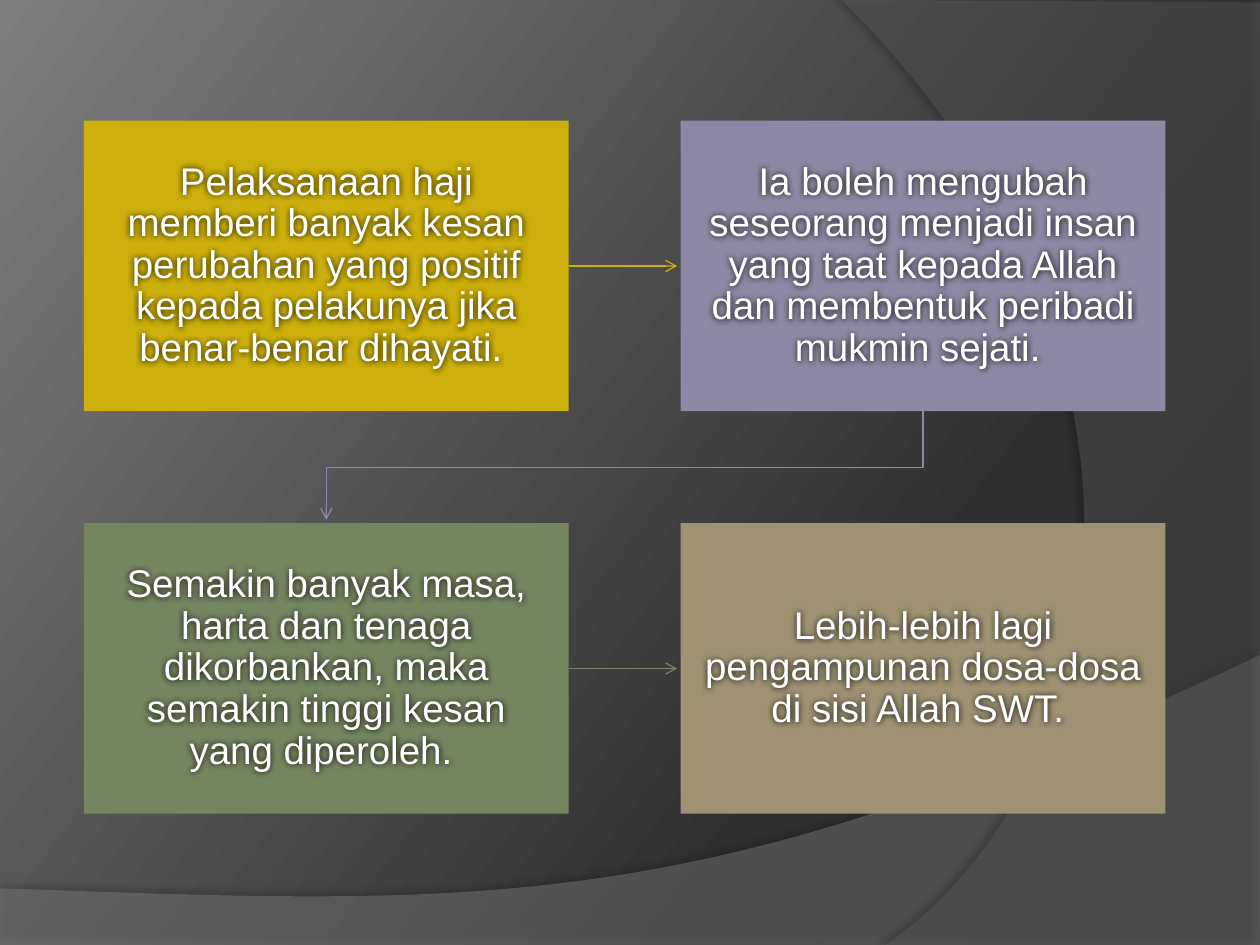
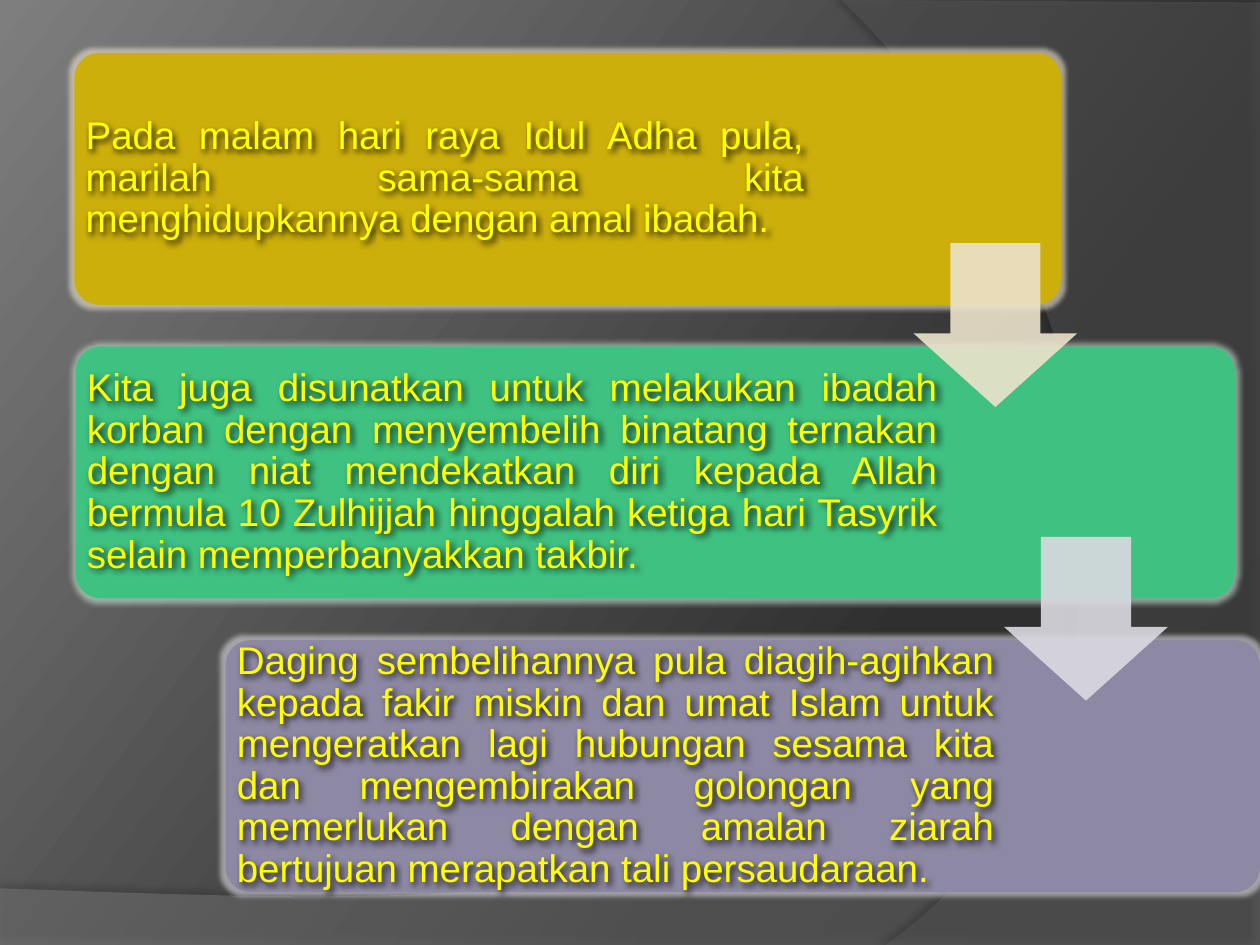
import pptx
import pptx.util
from lxml import etree
from pptx.dml.color import RGBColor
from pptx.enum.shapes import MSO_CONNECTOR, MSO_SHAPE
from pptx.enum.text import MSO_ANCHOR, PP_ALIGN
from pptx.oxml.ns import qn

Pt = pptx.util.Pt

GOLD = RGBColor(0xCC, 0xAF, 0x0A)
LAVENDER = RGBColor(0x8D, 0x89, 0xA4)
OLIVE = RGBColor(0x74, 0x85, 0x60)
SAND = RGBColor(0x9E, 0x92, 0x73)
EMERALD = RGBColor(0x3F, 0xC2, 0x81)
PALE_GOLD = RGBColor(0xEC, 0xE3, 0xCC)
PALE_GREEN = RGBColor(0xCC, 0xE8, 0xD8)
PALE_LAVENDER = RGBColor(0xDB, 0xDA, 0xE1)
WHITE = RGBColor(0xFF, 0xFF, 0xFF)
YELLOW = RGBColor(0xFF, 0xFF, 0x00)
BLACK = RGBColor(0, 0, 0)
LOWER_WAVE = RGBColor(0x7F, 0x7F, 0x7F)
RIGHT_WAVE = RGBColor(0x5E, 0x5E, 0x5E)
BACKDROP_STOPS = [
    (0, RGBColor(0x28, 0x28, 0x28)),
    (30, RGBColor(0x2F, 0x2F, 0x2F)),
    (100, RGBColor(0x7E, 0x7E, 0x7E)),
]

SLIDE_W, SLIDE_H = 720, 540
FONT, TEXT_SIZE = "Arial", 22

# Slide 1: grid of four steps
STEP_W, STEP_H = 277, 166
STEP_LEFTS, STEP_TOPS = (48, 389), (69, 299)
ARROW_GAP = 2
STEPS = [
    (GOLD, "Pelaksanaan haji memberi banyak kesan perubahan yang positif "
           "kepada pelakunya jika benar-benar dihayati. "),
    (LAVENDER, "Ia boleh mengubah seseorang menjadi insan yang taat kepada "
               "Allah dan membentuk peribadi mukmin sejati. "),
    (OLIVE, "Semakin banyak masa, harta dan tenaga dikorbankan, maka semakin "
            "tinggi kesan yang diperoleh. "),
    (SAND, "Lebih-lebih lagi pengampunan dosa-dosa di sisi Allah SWT. "),
]

# Slide 2: staircase of three bands (left, width, text width, fill, glow, text)
BAND_TOP, BAND_H, BAND_PITCH = 30.2, 144, 167.8
BANDS = [
    (42.5, 563.8, 423.4, GOLD, PALE_GOLD,
     "Pada malam hari raya Idul Adha pula, marilah sama-sama kita "
     "menghidupkannya dengan amal ibadah. "),
    (43.2, 662.4, 499, EMERALD, PALE_GREEN,
     "Kita juga disunatkan untuk melakukan ibadah korban dengan menyembelih "
     "binatang ternakan dengan niat mendekatkan diri kepada Allah bermula "
     "10 Zulhijjah hinggalah ketiga hari Tasyrik selain memperbanyakkan "
     "takbir. "),
    (128.9, 591.1, 445.7, LAVENDER, PALE_LAVENDER,
     "Daging sembelihannya pula diagih-agihkan kepada fakir miskin dan umat "
     "Islam untuk mengeratkan lagi hubungan sesama kita dan mengembirakan "
     "golongan yang memerlukan dengan amalan ziarah bertujuan merapatkan "
     "tali persaudaraan."),
]
ARROW_TOP, ARROW_SIZE = 139, 93.6
DOWN_ARROWS = [(522, PALE_GOLD), (573.8, PALE_LAVENDER)]


def add_colour(parent, colour, alpha=100):
    node = etree.SubElement(parent, qn("a:srgbClr"), val=str(colour))
    if alpha < 100:
        etree.SubElement(node, qn("a:alpha"), val=str(alpha * 1000))


def add_effect(shape, tag, colour, alpha, **lengths):
    shape.shadow.inherit = False
    effects = shape._element.spPr.find(qn("a:effectLst"))
    attributes = {key: str(int(value)) for key, value in lengths.items()}
    add_colour(etree.SubElement(effects, qn(tag), attributes), colour, alpha)


def add_shadow(shape, alpha, blur, distance, angle):
    add_effect(shape, "a:outerShdw", BLACK, alpha, blurRad=Pt(blur),
               dist=Pt(distance), dir=angle * 60000)


def paint(shape, colour, alpha=100):
    """Give a shape a plain fill without outline or shadow."""
    shape.shadow.inherit = False
    shape.fill.solid()
    shape.fill.fore_color.rgb = colour
    shape.line.fill.background()
    if alpha < 100:
        node = shape._element.spPr.find(qn("a:solidFill"))[0]
        etree.SubElement(node, qn("a:alpha"), val=str(alpha * 1000))


def add_block(slide, kind, left, top, width, height, colour, alpha=100):
    block = slide.shapes.add_shape(
        kind, Pt(left), Pt(top), Pt(width), Pt(height))
    paint(block, colour, alpha)
    return block


def add_outline(slide, points, close):
    points = [(Pt(x), Pt(y)) for x, y in points]
    builder = slide.shapes.build_freeform(*points[0])
    builder.add_line_segments(points[1:], close=close)
    return builder.convert_to_shape()


def bezier(start, control_1, control_2, end, steps=40):
    """Return points along a cubic curve, both ends included."""
    points = []
    for step in range(steps + 1):
        t = step / steps
        weights = ((1 - t) ** 3, 3 * t * (1 - t) ** 2,
                   3 * t ** 2 * (1 - t), t ** 3)
        corners = (start, control_1, control_2, end)
        points.append(tuple(sum(w * corner[axis] for w, corner
                                in zip(weights, corners)) for axis in (0, 1)))
    return points


def add_backdrop(slide):
    fill = slide.background.fill
    fill.gradient()
    fill.gradient_angle = 143
    stops = slide.element.find(".//" + qn("a:gsLst"))
    for stop in list(stops):
        stops.remove(stop)
    for position, colour in BACKDROP_STOPS:
        add_colour(etree.SubElement(stops, qn("a:gs"),
                                    pos=str(position * 1000)), colour)

    lower_edge = bezier((SLIDE_W, 374.4), (402.5, 524.9), (281.5, 517.7),
                        (0, 507.6))
    lower = add_outline(
        slide, [(0, SLIDE_H), (SLIDE_W, SLIDE_H)] + lower_edge, True)
    paint(lower, LOWER_WAVE, 45)
    add_shadow(lower, 35, 4, 3.5, 270)

    right_edge = bezier((506.2, SLIDE_H), (641.5, 445.7), (681.8, 198),
                        (481, 0))
    right = add_outline(
        slide, [(SLIDE_W, 1.4), (SLIDE_W, SLIDE_H)] + right_edge, True)
    paint(right, RIGHT_WAVE, 40)
    add_shadow(right, 45, 4, 4, 180)


def add_text(slide, text, left, top, width, height, colour, align, inset,
             shadow_distance):
    box = slide.shapes.add_textbox(Pt(left), Pt(top), Pt(width), Pt(height))
    add_shadow(box, 85, 4, shadow_distance, 45)
    frame = box.text_frame
    frame.word_wrap = True
    frame.vertical_anchor = MSO_ANCHOR.MIDDLE
    frame.margin_left = frame.margin_right = Pt(inset)
    frame.margin_top = frame.margin_bottom = Pt(inset)
    paragraph = frame.paragraphs[0]
    paragraph.text = text
    paragraph.alignment = align
    paragraph.line_spacing = 0.9
    paragraph.font.name = FONT
    paragraph.font.size = Pt(TEXT_SIZE)
    paragraph.font.color.rgb = colour


def style_arrow(arrow, colour):
    arrow.line.color.rgb = colour
    arrow.line.width = Pt(0.75)
    etree.SubElement(arrow.line._get_or_add_ln(), qn("a:tailEnd"),
                     type="arrow")


def add_side_arrow(slide, step, colour, row):
    y = Pt(STEP_TOPS[row] + STEP_H / 2)
    arrow = slide.shapes.add_connector(
        MSO_CONNECTOR.STRAIGHT, Pt(STEP_LEFTS[0] + STEP_W), y,
        Pt(STEP_LEFTS[1] - ARROW_GAP), y)
    arrow.begin_connect(step, 3)
    style_arrow(arrow, colour)
    etree.SubElement(arrow._element.spPr, qn("a:effectLst"))


def add_return_arrow(slide, colour):
    """Lead from the end of the first row to the start of the second."""
    start_x, end_x = (left + STEP_W / 2 for left in reversed(STEP_LEFTS))
    start_y = STEP_TOPS[0] + STEP_H
    bend_y = (start_y + STEP_TOPS[1]) / 2
    arrow = add_outline(
        slide, [(start_x, start_y), (start_x, bend_y), (end_x, bend_y),
                (end_x, STEP_TOPS[1] - ARROW_GAP)], False)
    arrow.shadow.inherit = False
    arrow.fill.background()
    style_arrow(arrow, colour)


def build_steps(slide):
    for index, (colour, text) in enumerate(STEPS):
        row, column = divmod(index, 2)
        area = (STEP_LEFTS[column], STEP_TOPS[row], STEP_W, STEP_H)
        step = add_block(slide, MSO_SHAPE.RECTANGLE, *area, colour)
        add_text(slide, text, *area, WHITE, PP_ALIGN.CENTER, 12.2, 0)
        if column == 0:
            add_side_arrow(slide, step, colour, row)
    add_return_arrow(slide, LAVENDER)


def build_bands(slide):
    for index, (left, width, text_width, colour, glow, text) in enumerate(BANDS):
        top = BAND_TOP + index * BAND_PITCH
        band = add_block(slide, MSO_SHAPE.ROUNDED_RECTANGLE, left, top, width,
                         BAND_H, colour)
        band.adjustments[0] = 0.1
        add_effect(band, "a:glow", glow, 60, rad=Pt(5))
        add_text(slide, text, left, top, text_width, BAND_H, YELLOW,
                 PP_ALIGN.JUSTIFY, 6.5, 2)
    for index, (left, colour) in enumerate(DOWN_ARROWS):
        arrow = add_block(slide, MSO_SHAPE.DOWN_ARROW, left,
                          ARROW_TOP + index * BAND_PITCH, ARROW_SIZE,
                          ARROW_SIZE, colour, 90)
        arrow.adjustments[0] = 0.55
        arrow.adjustments[1] = 0.45


def main():
    deck = pptx.Presentation()
    deck.slide_width, deck.slide_height = Pt(SLIDE_W), Pt(SLIDE_H)
    for build in (build_steps, build_bands):
        slide = deck.slides.add_slide(deck.slide_layouts[6])
        add_backdrop(slide)
        build(slide)
    deck.save("out.pptx")


if __name__ == "__main__":
    main()
